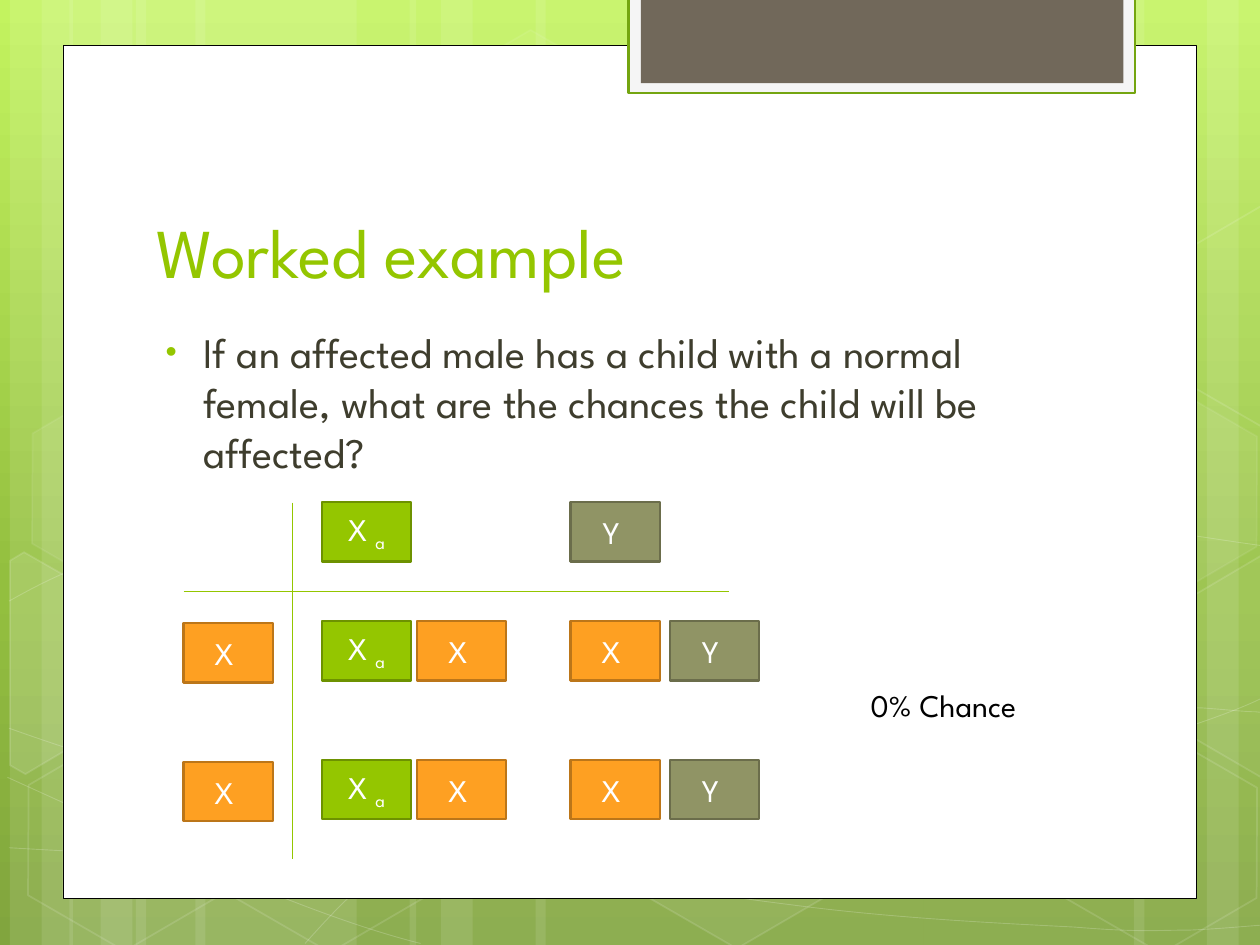
"""Build the worked example slide with its inheritance grid."""
from copy import deepcopy
from math import cos, radians, sin

from pptx import Presentation
from pptx import util as u
from pptx.dml.color import RGBColor
from pptx.enum import shapes, text
from pptx.oxml.ns import qn
from pptx.oxml.xmlchemy import OxmlElement

COLORS = {
    "white": "FFFFFF", "black": "000000", "body": "3E3D2D",
    "green": "94C600", "green_edge": "6D9200",
    "orange": "FEA022", "orange_edge": "BC7619",
    "olive": "909465", "olive_edge": "6B6D4B",
    "tab": "F5F5F5", "tab_edge": "74A510", "brown": "71685A",
    "sky_top": "C3F35F", "sky_mid": "93BF3F", "sky_low": "81A53E",
}


def write(sp, words, size=18, color="white", align="LEFT", anchor="TOP", sub=None):
    tf = sp.text_frame
    tf.word_wrap = True
    tf.auto_size = text.MSO_AUTO_SIZE.NONE
    tf.vertical_anchor = getattr(text.MSO_ANCHOR, anchor)
    p = tf.paragraphs[0]
    p.alignment = getattr(text.PP_ALIGN, align)
    for part in filter(None, (words, sub)):
        r = p.add_run()
        r.text = part
        r.font.size = u.Pt(size)
        r.font.name = "League Spartan"
        r.font.color.rgb = RGBColor.from_string(COLORS[color])
        if part == sub:
            r.font._element.set("baseline", "-25000")
    return p


def paint(sp, fill=None, line=None, width=1, fill_alpha=100, line_alpha=100):
    sp.shadow.inherit = False
    for target, color, alpha, where in (
        (sp.fill, fill, fill_alpha, "./a:solidFill/a:srgbClr"),
        (sp.line.fill, line, line_alpha, "./a:ln/a:solidFill/a:srgbClr"),
    ):
        if color is None or alpha == 0:
            target.background()
            continue
        target.solid()
        target.fore_color.rgb = RGBColor.from_string(COLORS[color])
        if alpha < 100:
            opacity = OxmlElement("a:alpha")
            opacity.set("val", str(alpha * 1000))
            sp.element.spPr.xpath(where)[0].append(opacity)
    if line:
        sp.line.width = u.Pt(width)


prs = Presentation()
prs.slide_width, prs.slide_height = u.Cm(25.4), u.Cm(19.05)
s = prs.slides.add_slide(prs.slide_layouts[5])
RECT = shapes.MSO_SHAPE.RECTANGLE

sky = s.background.fill
sky.gradient()
sky.gradient_angle = 270
stop_list = s.element.find(".//" + qn("a:gsLst"))
stop_list.append(deepcopy(stop_list[0]))
for stop, position, color in zip(
    sky.gradient_stops, (0, 0.62, 1), ("sky_top", "sky_mid", "sky_low")
):
    stop.position = position
    stop.color.rgb = RGBColor.from_string(COLORS[color])

stripes = [
    (2.74, 4.45), (0.2, 1.27), (0.84, 2.11), (3.94, 4.45), (1.4, 1.27), (2.03, 2.11),
    (18.62, 4.45), (24.33, 1.27), (22.86, 2.11), (10.8, 7.82), (8.26, 1.27), (8.89, 2.11),
]
for left, width in stripes:
    sp = s.shapes.add_shape(RECT, u.Cm(left), 0, u.Cm(width), prs.slide_height)
    paint(sp, "white", fill_alpha=10)

curves = [
    [(18, 1709), (155, 1717), (292, 1725), (483, 1722), (673, 1720), (909, 1715),
     (1163, 1689), (1417, 1664), (1778, 1615), (2012, 1567), (2243, 1519),
     (2482, 1443), (2558, 1400)],
    [(18, 1212), (91, 1171), (165, 1133), (307, 1095), (452, 1057), (658, 1001),
     (881, 983), (1107, 965), (1382, 963), (1661, 983), (1941, 1003),
     (2405, 1082), (2558, 1102)],
    [(15, 1567), (323, 1707), (627, 1847), (848, 1902)],
    [(18, 1468), (97, 1496), (178, 1524), (325, 1565), (472, 1603), (693, 1666),
     (907, 1709), (1118, 1753), (1384, 1798), (1595, 1824), (1806, 1852),
     (2032, 1862), (2167, 1869), (2299, 1880), (2334, 1875), (2400, 1875),
     (2466, 1872), (2512, 1867), (2558, 1864)],
    [(615, 1902), (660, 1852), (706, 1801), (767, 1755), (828, 1709), (914, 1659),
     (986, 1623), (1057, 1588), (1100, 1572), (1194, 1547), (1285, 1521),
     (1455, 1486), (1544, 1468), (1636, 1450), (1648, 1450), (1727, 1445),
     (1806, 1438), (1930, 1430), (2017, 1427), (2106, 1425), (2250, 1427),
     (2250, 1427), (2307, 1427), (2364, 1427), (2421, 1427), (2466, 1430),
     (2510, 1435), (2532, 1435), (2555, 1438), (2548, 1435), (2555, 1438)],
]
for curve in curves:
    outline = s.shapes.build_freeform(*curve[0], scale=u.Cm(0.01))
    outline.add_line_segments(curve[1:], close=False)
    sp = outline.convert_to_shape()
    legs = sp.element.findall(".//" + qn("a:lnTo"))
    for i in range(0, len(legs), 3):
        bend = OxmlElement("a:cubicBezTo")
        legs[i].addprevious(bend)
        for leg in legs[i:i + 3]:
            bend.append(leg[0])
            leg.getparent().remove(leg)
    paint(sp, line="white", width=0.5, line_alpha=20)

hexagons = [
    (8.48, 0.91, 4, 8), (12.62, 14.96, 6, 12), (0.28, 15.01, 0, 12), (0.36, 7.92, 7, 8),
    (4.42, 15.04, 0, 12), (19.13, 11.51, 10, 12), (21.18, 15.06, 0, 12), (21.18, 7.98, 7, 8),
]
for left, top, fill_alpha, line_alpha in hexagons:
    sp = s.shapes.add_shape(
        shapes.MSO_SHAPE.HEXAGON, u.Cm(left), u.Cm(top), u.Cm(4.45), u.Cm(3.86))
    sp.adjustments[0] = 0.285
    sp.rotation = 30
    paint(sp, "white", "white", 1, fill_alpha, line_alpha)

cut_hexagons = [
    (10, (91, 1359),
     [(20, 1130), (48, 1113), (244, 1224), (241, 1448), (51, 1560), (20, 1542)]),
    (4, (2502, 1321),
     [(2352, 1232), (2543, 1120), (2563, 1133), (2563, 1557), (2545, 1567), (2352, 1455)]),
    (0, (2502, 612),
     [(2352, 526), (2543, 414), (2565, 427), (2563, 851), (2545, 861), (2352, 749)]),
]
c, d = cos(radians(30)), sin(radians(30))
for fill_alpha, (cx, cy), corners in cut_hexagons:
    upright = [
        (cx + (x - cx) * c + (y - cy) * d, cy - (x - cx) * d + (y - cy) * c)
        for x, y in corners
    ]
    outline = s.shapes.build_freeform(*upright[0], scale=u.Cm(0.01))
    outline.add_line_segments(upright[1:], close=True)
    sp = outline.convert_to_shape()
    sp.rotation = 30
    paint(sp, "white", "white", 1, fill_alpha, 12)

panels = [
    (1.27, 0.91, 22.86, 17.2, "white", "black", 0.5),
    (12.67, -0.05, 10.21, 1.93, "tab", "tab_edge", 1.25),
    (12.92, -0.05, 9.73, 1.73, "brown", None, 0),
]
for *box, fill, line, width in panels:
    paint(s.shapes.add_shape(RECT, *map(u.Cm, box)), fill, line, width)

title = s.shapes.title
title.left, title.top, title.width, title.height = map(u.Cm, (2.9, 2.84, 19.51, 3.18))
title.element.getparent().append(title.element)
write(title, "Worked example", size=40, color="green", anchor="BOTTOM")

question = s.shapes.add_textbox(*map(u.Cm, (2.88, 6.45, 18.82, 9.75)))
p = write(
    question,
    "If an affected male has a child with a normal female, "
    "what are the chances the child will be affected?",
    size=24, color="body")
p.space_before = u.Pt(4.8)
pPr = p._p.get_or_add_pPr()
pPr.set("marL", str(u.Cm(0.97)))
pPr.set("indent", str(u.Cm(-0.76)))
bullet_color = OxmlElement("a:buClr")
rgb = OxmlElement("a:srgbClr")
rgb.set("val", COLORS["green"])
bullet_color.append(rgb)
pPr.append(bullet_color)
for tag, key, value in (
    ("a:buSzPct", "val", "76000"), ("a:buFont", "typeface", "Arial"), ("a:buChar", "char", "•")
):
    item = OxmlElement(tag)
    item.set(key, value)
    pPr.append(item)

for ends in ((3.7, 11.92, 14.7, 11.92), (5.89, 10.13, 5.89, 17.32)):
    axis = s.shapes.add_connector(shapes.MSO_CONNECTOR.STRAIGHT, *map(u.Cm, ends))
    axis.line.color.rgb = RGBColor.from_string(COLORS["green"])
    axis.line.width = u.Pt(0.75)
    axis.element.spPr.append(OxmlElement("a:effectLst"))

alleles = {"a": ("X ", "a", "green"), "X": ("X ", None, "orange"), "Y": ("Y ", None, "olive")}
columns = (3.7, 6.49, 8.41, 11.5, 13.5)
for top, genes in ((10.12, "-a-Y-"), (12.52, "XaXXY"), (15.32, "XaXXY")):
    for left, gene in zip(columns, genes):
        if gene in alleles:
            words, sub, color = alleles[gene]
            drop = 0.04 if left == columns[0] else 0
            sp = s.shapes.add_shape(RECT, u.Cm(left), u.Cm(top + drop), u.Cm(1.8), u.Cm(1.2))
            paint(sp, color, color + "_edge", 1.25)
            write(sp, words, sub=sub, align="CENTER", anchor="MIDDLE")

answer = s.shapes.add_textbox(*map(u.Cm, (17.3, 13.7, 4.8, 1.02)))
write(answer, "0% Chance", color="black")

prs.save("out.pptx")
